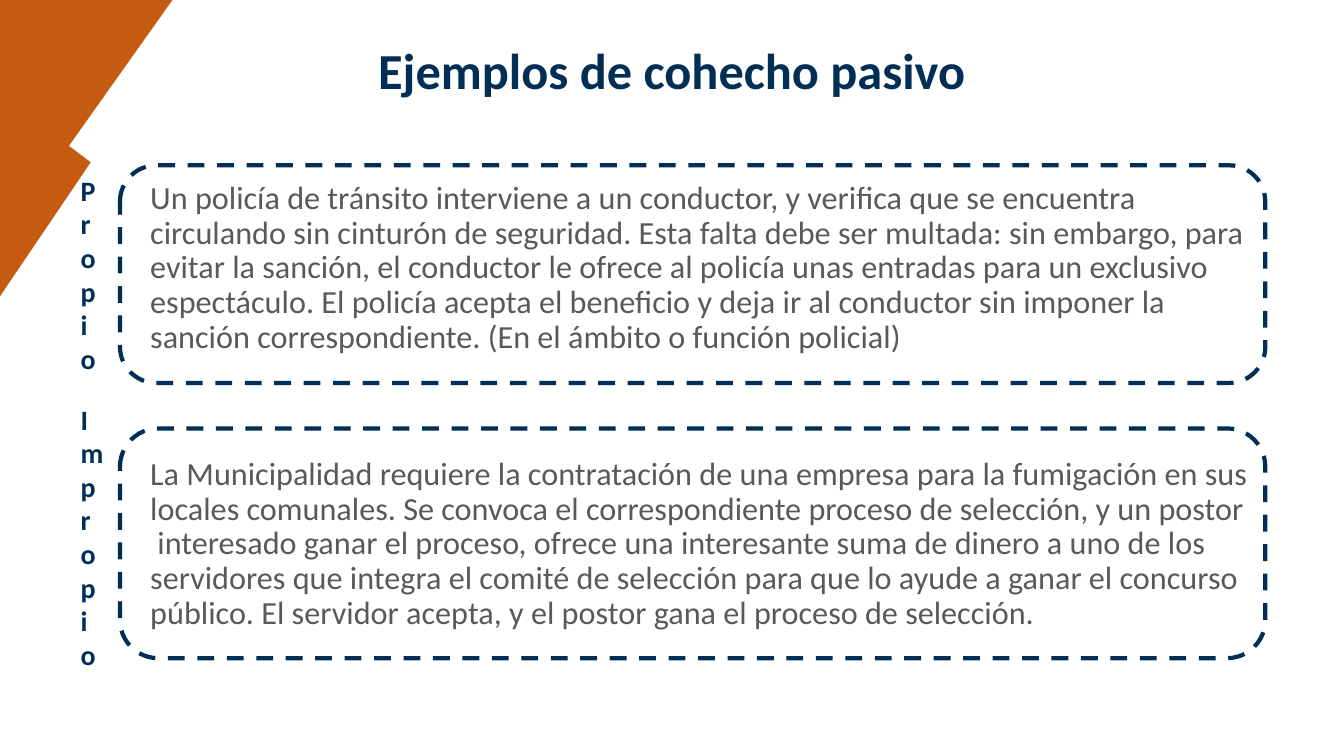
from pptx import Presentation
from pptx.dml.color import RGBColor
from pptx.enum.dml import MSO_LINE
from pptx.enum.shapes import MSO_SHAPE
from pptx.enum.text import MSO_ANCHOR, PP_ALIGN
from pptx.util import Emu, Pt

EMU_PER_PX = 9144  # 100 px to the inch
NAVY, GREY, ORANGE = "002E54", "595959", "C55A11"
BOX_LEFT, BOX_WIDTH = 119, 1136
LABEL_LEFT, LABEL_WIDTH = 70, 31

PROPER_CASE = (
    "Un policía de tránsito interviene a un conductor, y verifica que se encuentra "
    "circulando sin cinturón de seguridad. Esta falta debe ser multada: sin embargo, "
    "para evitar la sanción, el conductor le ofrece al policía unas entradas para un "
    "exclusivo espectáculo. El policía acepta el beneficio y deja ir al conductor sin "
    "imponer la sanción correspondiente. (En el ámbito o función policial)"
)
IMPROPER_CASE = (
    "La Municipalidad requiere la contratación de una empresa para la fumigación en sus "
    "locales comunales. Se convoca el correspondiente proceso de selección, y un postor "
    " interesado ganar el proceso, ofrece una interesante suma de dinero a uno de los "
    "servidores que integra el comité de selección para que lo ayude a ganar el concurso "
    "público. El servidor acepta, y el postor gana el proceso de selección."
)


def px(length):
    return Emu(length * EMU_PER_PX)


def rgb(hex_color):
    return RGBColor.from_string(hex_color)


def add_text(slide, text, left, top, width, height, *, size, color=NAVY, bold=False,
             align=PP_ALIGN.LEFT, anchor=MSO_ANCHOR.TOP, spacing=None,
             inset=None, indent=0):
    """Add a wrapped one-paragraph text box; inset and indent are in px."""
    frame = slide.shapes.add_textbox(px(left), px(top), px(width), px(height)).text_frame
    frame.word_wrap = True
    frame.vertical_anchor = anchor
    if inset is not None:
        frame.margin_left = frame.margin_right = px(inset)
        frame.margin_top = frame.margin_bottom = px(inset)
    paragraph = frame.paragraphs[0]
    paragraph.alignment = align
    paragraph.line_spacing = spacing
    if indent:
        paragraph._p.get_or_add_pPr().set("marL", str(px(indent)))
    run = paragraph.add_run()
    run.text = text
    run.font.name = "Calibri"
    run.font.size = Pt(size)
    run.font.bold = bold
    run.font.color.rgb = rgb(color)


def add_corner(slide, points):
    """Add an orange outline through points given in px."""
    builder = slide.shapes.build_freeform(*points[0], scale=EMU_PER_PX)
    builder.add_line_segments(points[1:], close=True)
    corner = builder.convert_to_shape()
    corner.shadow.inherit = False
    corner.fill.solid()
    corner.fill.fore_color.rgb = rgb(ORANGE)
    corner.line.fill.background()


def add_dashed_box(slide, top, height):
    box = slide.shapes.add_shape(MSO_SHAPE.ROUNDED_RECTANGLE, px(BOX_LEFT), px(top),
                                 px(BOX_WIDTH), px(height))
    box.shadow.inherit = False
    box.fill.background()
    box.line.color.rgb = rgb(NAVY)
    box.line.width = Pt(3)
    box.line.dash_style = MSO_LINE.DASH


def add_example(slide, label, case, *, label_top, label_height, text_top, box_top, box_height):
    add_text(slide, case, BOX_LEFT, text_top, BOX_WIDTH, 121, size=23, color=GREY,
             spacing=0.9, inset=13, indent=17)
    add_dashed_box(slide, box_top, box_height)
    # The narrow width breaks the label after every letter.
    add_text(slide, label, LABEL_LEFT, label_top, LABEL_WIDTH, label_height,
             size=20, bold=True)


def main():
    presentation = Presentation()
    presentation.slide_width, presentation.slide_height = px(1333), px(750)
    slide = presentation.slides.add_slide(presentation.slide_layouts[6])

    add_corner(slide, [(0, 93), (90, 161), (0, 294)])
    add_corner(slide, [(49, 172), (-1, 136), (-1, -1), (171, 0)])
    add_text(slide, "Ejemplos de cohecho pasivo", -1, 0, 1335, 145, size=36, bold=True,
             align=PP_ALIGN.CENTER, anchor=MSO_ANCHOR.MIDDLE, spacing=0.9)
    add_example(slide, "Propio", PROPER_CASE, label_top=167, label_height=212,
                text_top=167, box_top=164, box_height=216)
    add_example(slide, "Impropio", IMPROPER_CASE, label_top=394, label_height=279,
                text_top=441, box_top=425, box_height=228)

    presentation.save("out.pptx")


if __name__ == "__main__":
    main()
